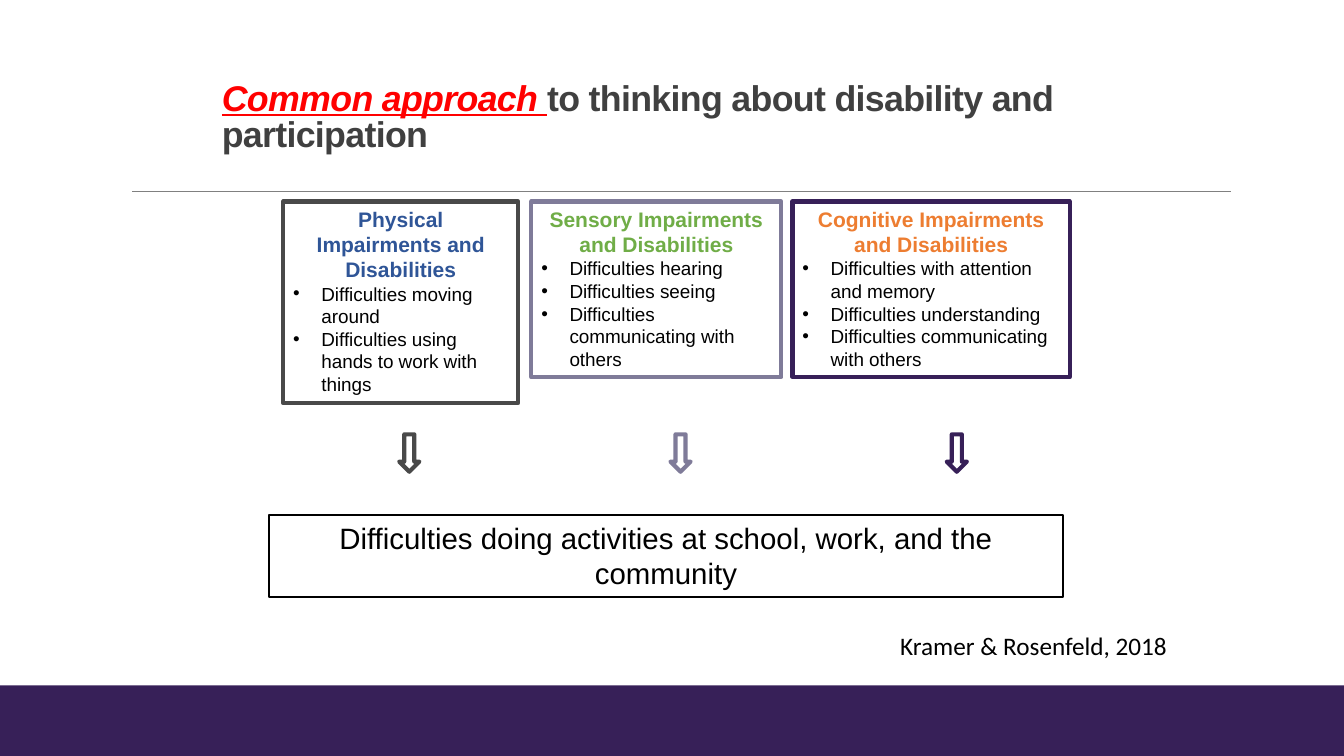
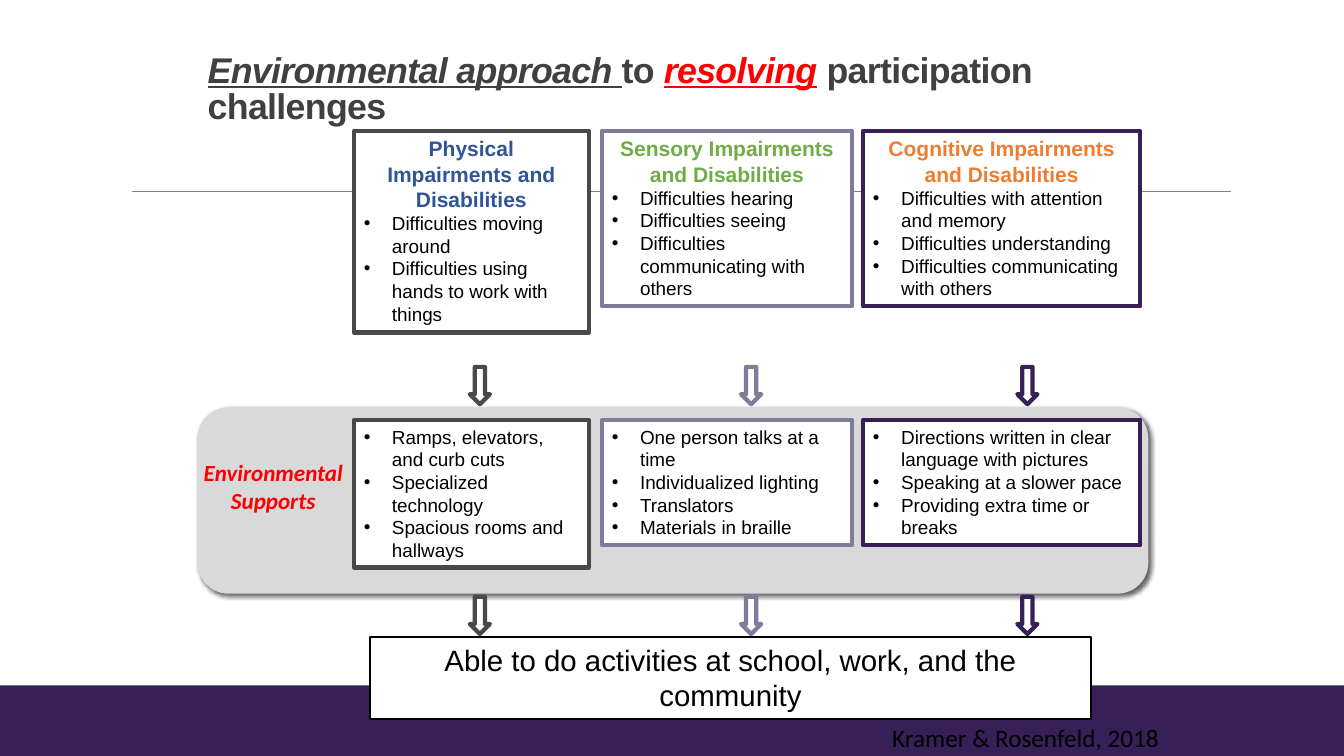
from lxml import etree
from pptx import Presentation
from pptx.dml.color import RGBColor
from pptx.enum import shapes, text
from pptx.oxml import ns, parse_xml
from pptx.util import Inches, Pt

COLORS = {
    "white": "FFFFFF", "black": "000000", "red": "FF0000", "heading": "404040",
    "rule": "808080", "purple": "372058", "mauve": "7F7B99", "charcoal": "494949",
    "panel": "D9D9D9", "blue": "2F5597", "green": "70AD47", "orange": "ED7D31",
}
PRESET = shapes.MSO_SHAPE
CENTER, LEFT = text.PP_ALIGN.CENTER, text.PP_ALIGN.LEFT
WIDTH, HEIGHT = 13.33, 7.5
INDENT = Inches(0.28)

# Offset of each column and of its arrow from the first column's left edge
COLUMNS = [
    dict(offset=0, width=2.33, arrow=1.15, line="charcoal", accent="blue",
         heading="Physical Impairments and Disabilities",
         difficulties=["Difficulties moving around",
                       "Difficulties using hands to work with things"],
         supports=["Ramps, elevators, and curb cuts", "Specialized technology",
                   "Spacious rooms and hallways"],
         difficulty_height=2.0, support_height=1.46),
    dict(offset=2.46, width=2.48, arrow=3.84, line="mauve", accent="green",
         heading="Sensory Impairments and Disabilities",
         difficulties=["Difficulties hearing", "Difficulties seeing",
                       "Difficulties communicating with others"],
         supports=["One person talks at a time", "Individualized lighting",
                   "Translators", "Materials in braille"],
         difficulty_height=1.74, support_height=1.24),
    dict(offset=5.05, width=2.75, arrow=6.58, line="purple", accent="orange",
         heading="Cognitive Impairments and Disabilities",
         difficulties=["Difficulties with attention and memory",
                       "Difficulties understanding",
                       "Difficulties communicating with others"],
         supports=["Directions written in clear language with pictures",
                   "Speaking at a slower pace", "Providing extra time or breaks"],
         difficulty_height=1.74, support_height=1.24),
]

# Title runs are (words, colour, emphasised)
SLIDES = [
    dict(title=[("Common approach ", "red", True),
                ("to thinking about disability and participation", "heading", False)],
         title_at=(2.1, 0.5, 9.12, 1.09), left=2.81, top=2, arrow_rows=[4.31],
         outcome="Difficulties doing activities at school, work, and the community",
         outcome_at=(2.67, 5.11, 7.87, 0.81), citation_at=(8.83, 6.2, 3.41, 0.4)),
    dict(title=[("Environmental approach ", "heading", True), ("to ", "heading", False),
                ("resolving", "red", True),
                (" participation challenges", "heading", False)],
         title_at=(1.96, 0.22, 9.53, 1.09), left=3.51, top=1.3, arrow_rows=[3.64, 5.92],
         panel_at=(1.96, 4.04, 9.43, 1.85), supports_top=4.17,
         supports_label_at=(1.91, 4.5, 1.6, 0.66),
         outcome="Able to do activities at school, work, and the community",
         outcome_at=(3.67, 6.32, 7.15, 0.81), citation_at=(8.75, 7.12, 3.41, 0.4)),
]


def add_block(slide, preset, bounds, fill="white", line=None, weight=3):
    block = slide.shapes.add_shape(preset, *map(Inches, bounds))
    block.shadow.inherit = False
    block.fill.solid()
    block.fill.fore_color.rgb = RGBColor.from_string(COLORS[fill])
    if line:
        block.line.color.rgb = RGBColor.from_string(COLORS[line])
        block.line.width = Pt(weight)
    else:
        block.line.fill.background()
    return block


def write(frame, lines, size, color="black", font="Arial", align=CENTER,
          bold=False, italic=False, bullets=False):
    """Add lines of one style to a frame, starting in its empty first paragraph."""
    frame.word_wrap = True
    frame.auto_size = text.MSO_AUTO_SIZE.SHAPE_TO_FIT_TEXT
    frame.vertical_anchor = text.MSO_ANCHOR.TOP
    for line in lines:
        paragraph = frame.paragraphs[-1] if not frame.text else frame.add_paragraph()
        paragraph.text = line
        paragraph.alignment = align
        if bullets:
            properties = paragraph.runs[0].font and paragraph._p.get_or_add_pPr()
            properties.set("marL", str(INDENT))
            properties.set("indent", str(-INDENT))
            etree.SubElement(properties, ns.qn("a:buFont")).set("typeface", "Arial")
            etree.SubElement(properties, ns.qn("a:buChar")).set("char", "•")
        style = paragraph.runs[0].font
        style.name, style.size, style.bold, style.italic = font, Pt(size), bold, italic
        style.color.rgb = RGBColor.from_string(COLORS[color])


deck = Presentation()
deck.slide_width, deck.slide_height = Inches(WIDTH), Inches(HEIGHT)
layout = deck.slide_layouts[5]

for number, content in enumerate(SLIDES):
    slide = deck.slides.add_slide(layout)

    if number == 0:
        # The band and rule are drawn once, then moved to the shared layout
        band = add_block(slide, PRESET.RECTANGLE, (0, 6.8, WIDTH, HEIGHT - 6.8), "purple")
        rule = slide.shapes.add_connector(
            shapes.MSO_CONNECTOR.STRAIGHT, *map(Inches, (1.31, 1.9, 12.21, 1.9)))
        rule.line.color.rgb = RGBColor.from_string(COLORS["rule"])
        rule.line.width = Pt(0.5)
        etree.SubElement(rule.element.spPr, ns.qn("a:effectLst"))
        for part in (rule, band):
            layout.shapes.element.insert(2, part.element)

    title = slide.shapes.title
    title.left, title.top, title.width, title.height = map(Inches, content["title_at"])
    title.text_frame.auto_size = text.MSO_AUTO_SIZE.NONE
    title.text_frame.vertical_anchor = text.MSO_ANCHOR.BOTTOM
    heading = title.text_frame.paragraphs[0]
    heading.alignment, heading.line_spacing = LEFT, 0.85
    for words, color, emphasised in content["title"]:
        run = heading.add_run()
        run.text = words
        run.font.name, run.font.size, run.font.bold = "Arial", Pt(25.5), True
        run.font.italic = run.font.underline = emphasised
        run.font.color.rgb = RGBColor.from_string(COLORS[color])
        run.font._element.set("spc", "-50")

    if "panel_at" in content:
        panel = add_block(slide, PRESET.ROUNDED_RECTANGLE, content["panel_at"], "panel")
        panel.element.spPr.replace(panel.element.spPr.find(ns.qn("a:effectLst")), parse_xml(
            f'<a:effectLst {ns.nsdecls("a")}><a:outerShdw blurRad="{Pt(3.5)}" '
            f'dist="{Pt(2)}" dir="2700000" algn="tl" rotWithShape="0"><a:srgbClr '
            f'val="{COLORS["black"]}"><a:alpha val="60000"/></a:srgbClr>'
            '</a:outerShdw></a:effectLst>'))
        label = slide.shapes.add_textbox(*map(Inches, content["supports_label_at"]))
        write(label.text_frame, ["Environmental Supports"], 16.5, "red", "Calibri",
              bold=True, italic=True)

    for column in COLUMNS:
        left = content["left"] + column["offset"]
        difficulty = add_block(
            slide, PRESET.RECTANGLE,
            (left, content["top"], column["width"], column["difficulty_height"]),
            line=column["line"])
        write(difficulty.text_frame, [column["heading"]], 15, column["accent"], bold=True)
        write(difficulty.text_frame, column["difficulties"], 13.5, align=LEFT, bullets=True)
        if "supports_top" in content:
            support = add_block(
                slide, PRESET.RECTANGLE,
                (left, content["supports_top"], column["width"], column["support_height"]),
                line=column["line"])
            write(support.text_frame, column["supports"], 13.5, align=LEFT, bullets=True)
        for row in content["arrow_rows"]:
            add_block(slide, PRESET.DOWN_ARROW,
                      (content["left"] + column["arrow"], row, 0.2, 0.37),
                      line=column["line"])

    outcome = add_block(slide, PRESET.RECTANGLE, content["outcome_at"],
                        line="black", weight=1.25)
    write(outcome.text_frame, [content["outcome"]], 21)
    citation = slide.shapes.add_textbox(*map(Inches, content["citation_at"]))
    write(citation.text_frame, ["Kramer & Rosenfeld, 2018"], 18, font="Calibri", align=LEFT)

deck.save("out.pptx")
